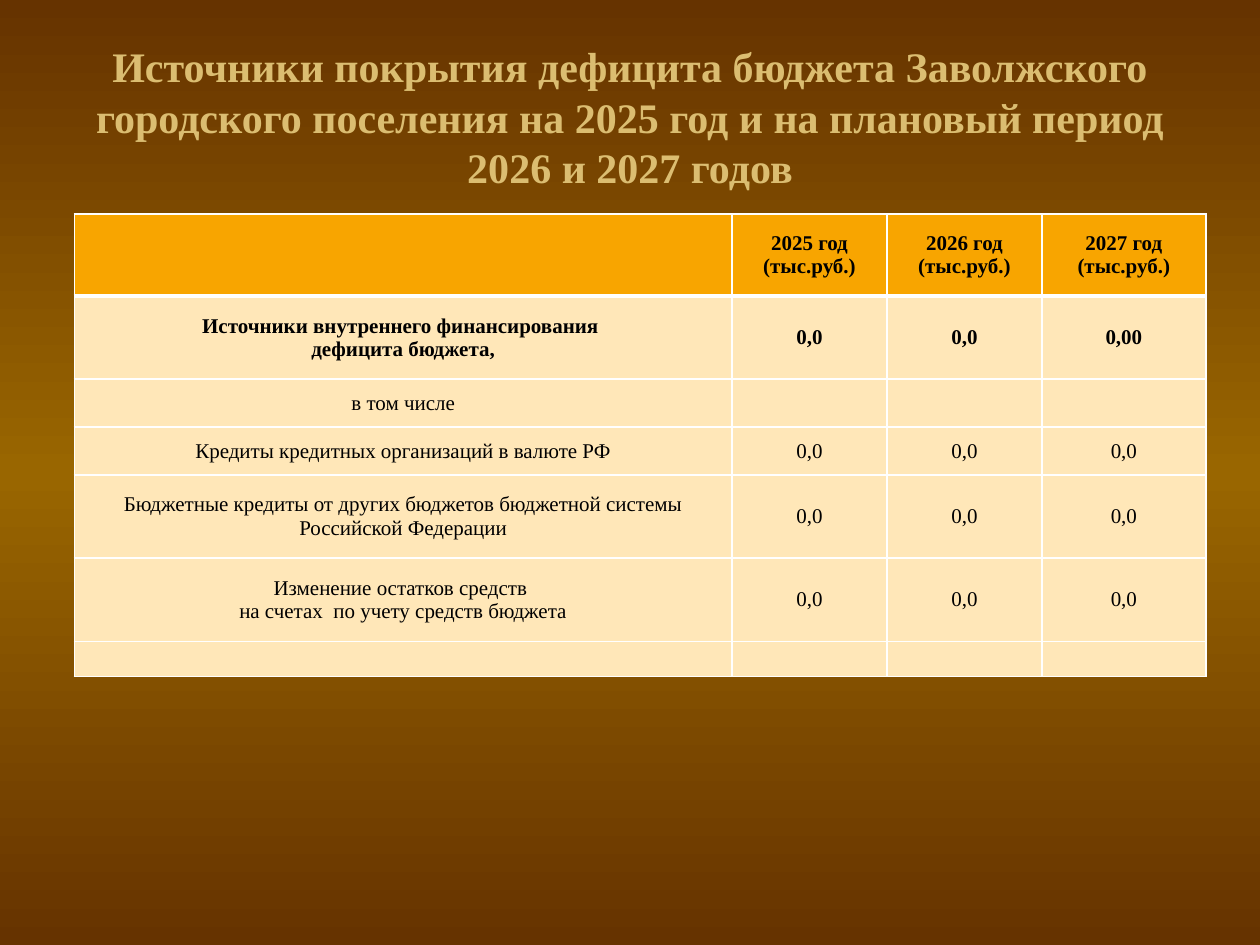
from copy import deepcopy

from lxml import etree
from pptx import Presentation
from pptx.dml.color import RGBColor
from pptx.enum.text import MSO_ANCHOR, PP_ALIGN
from pptx.oxml.ns import qn
from pptx.util import Inches, Pt

CENTER = PP_ALIGN.CENTER
MIDDLE = MSO_ANCHOR.MIDDLE
FONT = "Times New Roman"
COLORS = {
    "edge": "663300",
    "glow": "996600",
    "title": "DBBD71",
    "header": "F8A500",
    "body": "FFE7B8",
    "text": "000000",
    "border": "FFFFFF",
}


def write_text(tf, text, size, color, bold):
    tf.text = text
    for p in tf.paragraphs:
        p.alignment = CENTER
        for r in p.runs:
            fmt = {"name": FONT, "size": Pt(size), "bold": bold}
            for key, value in fmt.items():
                setattr(r.font, key, value)
            r.font.color.rgb = RGBColor.from_string(COLORS[color])
        if not p.runs:
            etree.SubElement(p._p, qn("a:endParaRPr"), sz=str(size * 100))


def set_border(cell, side, width):
    ln = etree.SubElement(cell._tc.get_or_add_tcPr(), qn(f"a:ln{side}"), w=str(Pt(width)))
    fill = etree.SubElement(ln, qn("a:solidFill"))
    etree.SubElement(fill, qn("a:srgbClr"), val=COLORS["border"])


prs = Presentation()
prs.slide_width = Inches(10)
prs.slide_height = Inches(7.5)
s = prs.slides.add_slide(prs.slide_layouts[6])

bg = s.background.fill
bg.gradient()
bg.gradient_angle = 270
stops = s.element.find(".//" + qn("a:gsLst"))
stops.append(deepcopy(stops[0]))
for stop, color, position in zip(bg.gradient_stops, ("edge", "glow", "edge"), (0, 0.5, 1)):
    stop.color.rgb = RGBColor.from_string(COLORS[color])
    stop.position = position

title = s.shapes.add_textbox(Inches(0.5), Inches(0.3), Inches(9), Inches(1.25))
tf = title.text_frame
tf.word_wrap = True
tf.vertical_anchor = MIDDLE
write_text(
    tf,
    "Источники покрытия дефицита бюджета Заволжского городского поселения "
    "на 2025 год и на плановый период 2026 и 2027 годов",
    24, "title", True,
)

rows = [
    ["", *(f"{year} год\n(тыс.руб.)" for year in (2025, 2026, 2027))],
    ["Источники внутреннего финансирования \nдефицита бюджета,", "0,0", "0,0", "0,00"],
    ["в том числе", "", "", ""],
    ["Кредиты кредитных организаций в валюте РФ", "0,0", "0,0", "0,0"],
    ["Бюджетные кредиты от других бюджетов бюджетной системы Российской Федерации",
     "0,0", "0,0", "0,0"],
    ["Изменение остатков средств \nна счетах  по учету средств бюджета", "0,0", "0,0", "0,0"],
    ["", "", "", ""],
]
col_widths = [5.22, 1.23, 1.23, 1.3]
row_heights = [0.65, 0.66, 0.38, 0.38, 0.66, 0.66, 0.28]

table = s.shapes.add_table(
    len(rows), len(col_widths), Inches(0.59), Inches(1.7),
    Inches(sum(col_widths)), Inches(sum(row_heights)),
).table
for column, width in zip(table.columns, col_widths):
    column.width = Inches(width)
for row, height in zip(table.rows, row_heights):
    row.height = Inches(height)

for i, row in enumerate(rows):
    for j, text in enumerate(row):
        cell = table.cell(i, j)
        write_text(cell.text_frame, text, 12, "text", i < 2)
        margin = 0.05 if text else 0
        fmt = {"vertical_anchor": MIDDLE, "margin_top": Inches(margin), "margin_bottom": Inches(margin)}
        for key, value in fmt.items():
            setattr(cell, key, value)
        borders = {"L": 1, "R": 1, "T": 3 if i == 1 else 1, "B": 3 if i == 0 else 1}
        for side, width in borders.items():
            set_border(cell, side, width)
        cell.fill.solid()
        cell.fill.fore_color.rgb = RGBColor.from_string(COLORS["header" if i == 0 else "body"])

prs.save("out.pptx")
